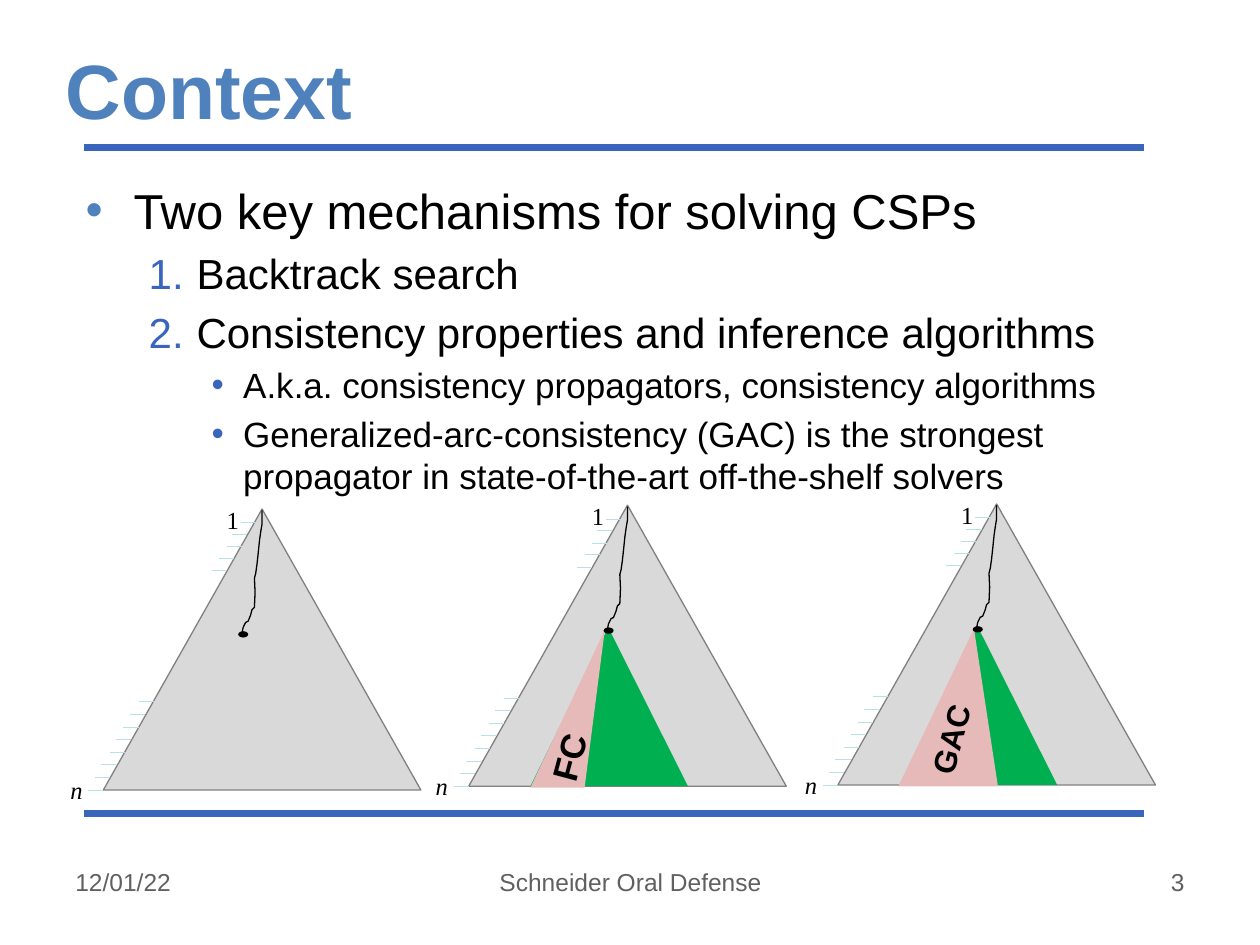
"""Build the Context slide: two mechanisms for solving CSPs, with three search trees."""
from dataclasses import dataclass

from pptx import Presentation
from pptx.dml.color import RGBColor
from pptx.enum.shapes import MSO_CONNECTOR, MSO_SHAPE
from pptx.enum.text import MSO_ANCHOR, MSO_AUTO_SIZE, PP_ALIGN
from pptx.oxml.ns import qn
from pptx.util import Inches, Pt
from lxml.etree import SubElement


@dataclass(frozen=True)
class Theme:
    sans: str = "Arial"
    serif: str = "Times New Roman"
    blue: str = "4F81BD"
    rule: str = "3A65BC"
    ink: str = "000000"
    foot: str = "606060"
    tree: str = "D9D9D9"
    edge: str = "808080"
    tick: str = "BBE0E3"
    kept: str = "00B050"
    cut: str = "E6BAB8"
    head: int = 44
    levels: tuple = (28, 24, 20)
    small: int = 14


T = Theme()
WIDE, HIGH = 10, 7.5
TITLE = "Context"
BODY = [
    (0, "•", "Two key mechanisms for solving CSPs"),
    (1, "1.", "Backtrack search"),
    (1, "1.", "Consistency properties and inference algorithms"),
    (2, "•", "A.k.a. consistency propagators, consistency algorithms"),
    (2, "•", "Generalized-arc-consistency (GAC) is the strongest "
             "propagator in state-of-the-art off-the-shelf solvers"),
]
INDENTS = [(0.38, -0.38), (0.88, -0.38), (1.25, -0.25)]
FOOTER = [
    ("12/01/22", 0.5, 2.33, PP_ALIGN.LEFT),
    ("Schneider Oral Defense", 3.42, 3.17, PP_ALIGN.CENTER),
    ("3", 7.17, 2.33, PP_ALIGN.RIGHT),
]
RULES = (1.17, 6.46)
TREES = [
    (0.82, 4.04, None),
    (3.72, 4.01, ("FC", 20, (0.41, 1.65, 0.84, 0.44), (0.49, 0.92))),
    (6.65, 4.00, ("GAC", 18, (0.41, 1.53, 1.04, 0.40), (0.48, 1.27))),
]
TREE_W, TREE_H, TICK, STEP = 2.52, 2.23, 0.12, 0.1
LOW = (-0.12, -0.07, -0.02, 0.05, 0.10, 0.16, 0.21, 0.28)
TOP = ((1.09, 0.11), (1.02, 0.20), (0.98, 0.30), (0.92, 0.39), (0.86, 0.49))
TICKS = [(x, TREE_H - STEP * i) for i, x in enumerate(LOW)] + list(TOP)
TRAIL = [(1.26, 0.01), (1.26, 0.12), (1.25, 0.18), (1.24, 0.25), (1.23, 0.35),
         (1.22, 0.44), (1.21, 0.51), (1.20, 0.55), (1.205, 0.66), (1.20, 0.78),
         (1.18, 0.80), (1.17, 0.84), (1.15, 0.89), (1.13, 0.90), (1.12, 0.92),
         (1.11, 0.94), (1.10, 0.99)]


def color(code):
    return RGBColor.from_string(code)


def write(para, text, size, tint=T.ink, face=T.sans, bold=False, slant=False):
    run = para.add_run()
    run.text = text
    font = run.font
    font.name, font.size, font.bold, font.italic = face, Pt(size), bold, slant
    font.color.rgb = color(tint)


def place(shape, *box):
    shape.left, shape.top, shape.width, shape.height = map(Inches, box)


def paint(shape, fill=None, line=None):
    shape.shadow.inherit = False
    if fill:
        shape.fill.solid()
        shape.fill.fore_color.rgb = color(fill)
    else:
        shape.fill.background()
    if line:
        shape.line.color.rgb = color(line)
        shape.line.width = Pt(0.75)
    else:
        shape.line.fill.background()
    return shape


def stroke(shapes, x, y, span, tint, width):
    ends = map(Inches, (x, y, x + span, y))
    line = shapes.add_connector(MSO_CONNECTOR.STRAIGHT, *ends)
    line.line.color.rgb = color(tint)
    line.line.width = Pt(width)
    SubElement(line._element.spPr, qn("a:effectLst"))


def label(shapes, box, text, size, wrap=True, align=PP_ALIGN.LEFT, **look):
    item = shapes.add_textbox(*map(Inches, box))
    item.text_frame.word_wrap = wrap
    para = item.text_frame.paragraphs[0]
    para.alignment = align
    write(para, text, size, **look)
    return item


def bullet(para, level, mark):
    para.level = level
    props = para._p.get_or_add_pPr()
    left, hang = INDENTS[level]
    props.set("marL", str(Inches(left)))
    props.set("indent", str(Inches(hang)))
    tint = SubElement(props, qn("a:buClr"))
    SubElement(tint, qn("a:srgbClr"), val=T.rule if level else T.blue)
    if mark == "•":
        SubElement(props, qn("a:buChar"), char=mark)
    else:
        SubElement(props, qn("a:buAutoNum"), type="arabicPeriod")


def outline(shapes, x, y, points, closed):
    first, *rest = [(Inches(x + a), Inches(y + b)) for a, b in points]
    path = shapes.build_freeform(*first)
    path.add_line_segments(rest, close=closed)
    return path.convert_to_shape()


def draw_tree(slide, x, y, prune):
    shapes = slide.shapes.add_group_shape().shapes

    def preset(kind, left, top, wide, high, fill, line=None):
        box = map(Inches, (x + left, y + top, wide, high))
        return paint(shapes.add_shape(kind, *box), fill, line)

    preset(MSO_SHAPE.ISOSCELES_TRIANGLE, 0, 0, TREE_W, TREE_H, T.tree, T.edge)
    for left, top in TICKS:
        stroke(shapes, x + left, y + top, TICK, T.tick, 0.5)
    if prune:
        name, size, (left, top, wide, high), (start, end) = prune
        kept = preset(MSO_SHAPE.ISOSCELES_TRIANGLE, 0.49, 0.97, 1.25, 1.26, T.kept)
        kept.adjustments[0] = 0.494
        wedge = [(1.08, 0.99), (end, 2.24), (start, 2.24)]
        paint(outline(shapes, x, y, wedge, True), T.cut)
        tag = label(shapes, (x + left, y + top, wide, high), name, size, bold=True)
        tag.rotation = 285
    paint(outline(shapes, x, y, TRAIL, False), None, T.ink)
    preset(MSO_SHAPE.OVAL, 1.07, 0.97, 0.08, 0.05, T.ink)
    for text, left, top in (("1", 0.88, -0.08), ("n", -0.36, 2.06)):
        label(shapes, (x + left, y + top, 0.3, 0.34), text, T.small,
              wrap=False, face=T.serif, slant=text == "n")


def main():
    deck = Presentation()
    deck.slide_width, deck.slide_height = Inches(WIDE), Inches(HIGH)
    slide = deck.slides.add_slide(deck.slide_layouts[1])
    title, body = slide.placeholders
    for y in RULES:
        stroke(slide.shapes, 0.67, y, 8.41, T.rule, 4)

    place(title, 0.42, 0.33, 9, 0.75)
    frame = title.text_frame
    frame.auto_size = MSO_AUTO_SIZE.NONE
    frame.vertical_anchor = MSO_ANCHOR.MIDDLE
    frame.paragraphs[0].alignment = PP_ALIGN.LEFT
    write(frame.paragraphs[0], TITLE, T.head, T.blue, bold=True)

    place(body, 0.58, 1.38, 8.84, 4.95)
    frame = body.text_frame
    frame.auto_size = MSO_AUTO_SIZE.NONE
    for i, (level, mark, text) in enumerate(BODY):
        para = frame.add_paragraph() if i else frame.paragraphs[0]
        bullet(para, level, mark)
        write(para, text, T.levels[level])

    for text, x, wide, align in FOOTER:
        label(slide.shapes, (x, 6.83, wide, 0.52), text, T.small,
              align=align, tint=T.foot)
    for tree in TREES:
        draw_tree(slide, *tree)
    deck.save("out.pptx")


if __name__ == "__main__":
    main()
